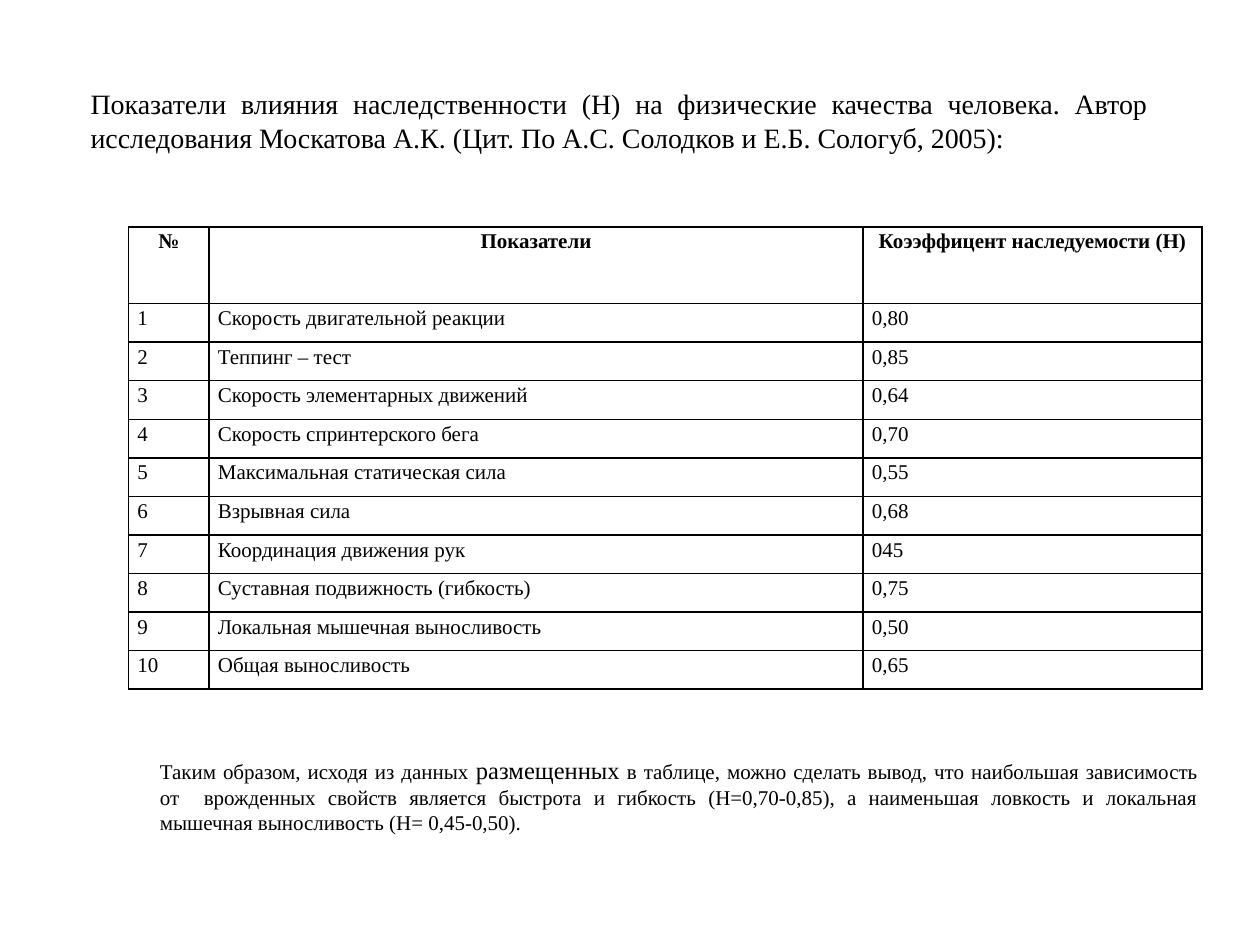
from typing import NamedTuple

import lxml.etree
import pptx
import pptx.dml.color
import pptx.enum.text
import pptx.oxml.ns
import pptx.util
from pptx.util import Inches

FONT = "Times New Roman"
BLACK = "000000"
WHITE = "FFFFFF"
ALIGN = pptx.enum.text.PP_ALIGN
ANCHOR = pptx.enum.text.MSO_ANCHOR


class Indicator(NamedTuple):
    name: str
    heritability: str


class Run(NamedTuple):
    text: str
    size: float


HEADERS = ("№", "Показатели", "Коээффицент наследуемости (Н)")
INDICATORS = (
    Indicator("Скорость двигательной реакции", "0,80"),
    Indicator("Теппинг – тест", "0,85"),
    Indicator("Скорость элементарных движений", "0,64"),
    Indicator("Скорость спринтерского бега", "0,70"),
    Indicator("Максимальная статическая сила", "0,55"),
    Indicator("Взрывная сила", "0,68"),
    Indicator("Координация движения рук", "045"),
    Indicator("Суставная подвижность (гибкость)", "0,75"),
    Indicator("Локальная мышечная выносливость", "0,50"),
    Indicator("Общая выносливость", "0,65"),
)
COLUMN_WIDTHS = (0.64, 5.19, 2.69)
HEADER_HEIGHT = 0.61
ROW_HEIGHT = 0.306

TITLE = (
    Run("Показатели влияния наследственности (Н) на физические качества человека. "
        "Автор исследования Москатова А.К. (Цит. По А.С. Солодков и Е.Б. Сологуб, 2005):", 16),
)
CONCLUSION = (
    Run("Таким образом, исходя из данных ", 12),
    Run("размещенных", 14),
    Run(" в таблице, можно сделать вывод, что наибольшая зависимость от  врожденных "
        "свойств является быстрота и гибкость (Н=0,70-0,85), а наименьшая ловкость и "
        "локальная мышечная выносливость (Н= 0,45-0,50).", 12),
)


def color(value: str) -> pptx.dml.color.RGBColor:
    return pptx.dml.color.RGBColor.from_string(value)


def write_text(text_frame, runs: tuple[Run, ...], *, align=ALIGN.JUSTIFY,
               bold: bool = False, line_spacing: float = 1.0) -> None:
    paragraph = text_frame.paragraphs[0]
    paragraph.alignment = align
    paragraph.line_spacing = line_spacing
    for item in runs:
        run = paragraph.add_run()
        run.text = item.text
        run.font.name = FONT
        run.font.size = pptx.util.Pt(item.size)
        run.font.bold = bold
        run.font.color.rgb = color(BLACK)


def add_text_box(slide, runs: tuple[Run, ...], left: float, top: float, width: float,
                 height: float, *, anchor=ANCHOR.MIDDLE) -> None:
    box = slide.shapes.add_textbox(Inches(left), Inches(top), Inches(width), Inches(height))
    box.text_frame.word_wrap = True
    box.text_frame.vertical_anchor = anchor
    write_text(box.text_frame, runs)


def set_borders(cell, line_color: str, points: float) -> None:
    """Draw all four sides; border elements must precede the cell fill."""
    properties = cell._tc.get_or_add_tcPr()
    qn = pptx.oxml.ns.qn
    for position, side in enumerate(("a:lnL", "a:lnR", "a:lnT", "a:lnB")):
        line = lxml.etree.Element(qn(side), w=str(pptx.util.Pt(points)))
        fill = lxml.etree.SubElement(line, qn("a:solidFill"))
        lxml.etree.SubElement(fill, qn("a:srgbClr"), val=line_color)
        properties.insert(position, line)


def fill_cell(cell, text: str, is_header: bool) -> None:
    cell.margin_left = cell.margin_right = Inches(0.07)
    cell.margin_top = cell.margin_bottom = 0
    cell.fill.solid()
    cell.fill.fore_color.rgb = color(WHITE)
    set_borders(cell, BLACK, 1)
    write_text(cell.text_frame, (Run(text, 12),), bold=is_header, line_spacing=1.15,
               align=ALIGN.CENTER if is_header else ALIGN.JUSTIFY)


def add_indicator_table(slide, left: float, top: float) -> None:
    rows = [HEADERS]
    rows += [(str(number), *indicator) for number, indicator in enumerate(INDICATORS, 1)]
    height = HEADER_HEIGHT + ROW_HEIGHT * len(INDICATORS)
    table = slide.shapes.add_table(
        len(rows), len(HEADERS), Inches(left), Inches(top),
        Inches(sum(COLUMN_WIDTHS)), Inches(height)).table
    for column, width in zip(table.columns, COLUMN_WIDTHS):
        column.width = Inches(width)
    for row_index, values in enumerate(rows):
        is_header = row_index == 0
        table.rows[row_index].height = Inches(HEADER_HEIGHT if is_header else ROW_HEIGHT)
        for column_index, text in enumerate(values):
            fill_cell(table.cell(row_index, column_index), text, is_header)


def main() -> None:
    presentation = pptx.Presentation()
    presentation.slide_width = Inches(10)
    presentation.slide_height = Inches(7.5)
    slide = presentation.slides.add_slide(presentation.slide_layouts[6])
    add_indicator_table(slide, 1.02, 1.8)
    add_text_box(slide, TITLE, 0.62, 0.64, 8.59, 0.92, anchor=ANCHOR.TOP)
    add_text_box(slide, CONCLUSION, 1.17, 5.94, 8.44, 0.74)
    presentation.save("out.pptx")


if __name__ == "__main__":
    main()
